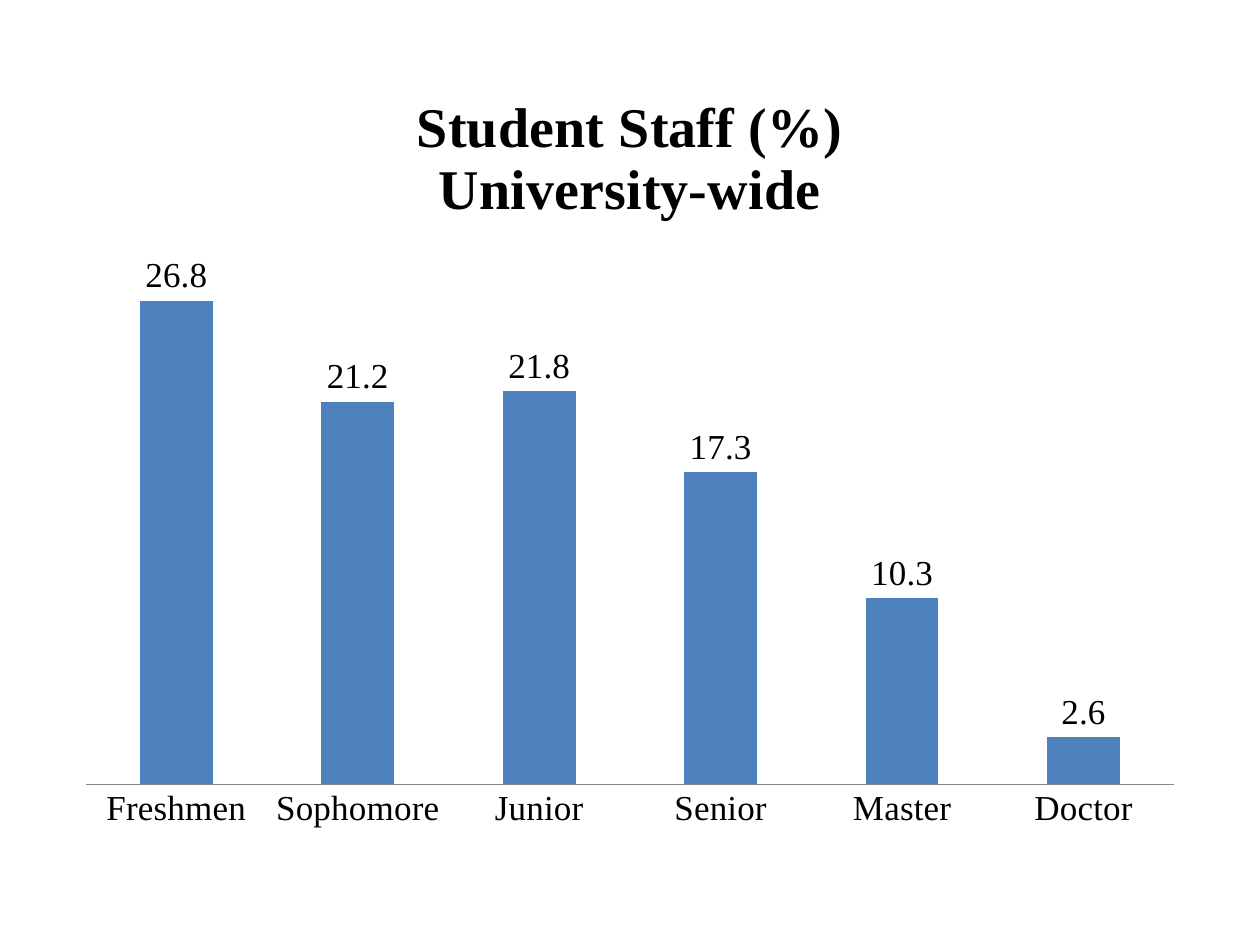
from pptx import Presentation
from pptx.chart.data import CategoryChartData
from pptx.dml.color import RGBColor
from pptx.enum.chart import (
    XL_CHART_TYPE as ChartType,
    XL_LABEL_POSITION as LabelPosition,
    XL_TICK_MARK as TickMark,
)
from pptx.util import Inches, Pt

BLACK = RGBColor(0x00, 0x00, 0x00)
BLUE = RGBColor(0x4F, 0x81, 0xBD)
GRAY = RGBColor(0x86, 0x86, 0x86)

STAFF_SHARES = {
    "Freshmen": 26.8,
    "Sophomore": 21.2,
    "Junior": 21.8,
    "Senior": 17.3,
    "Master": 10.3,
    "Doctor": 2.6,
}


def apply_format(target, values):
    for name, value in values.items():
        setattr(target, name, value)


class SlideBuilder:
    """Holds the text style and the current slide."""

    label_font = {"name": "Times New Roman", "size": Pt(20), "bold": False}
    title_font = {"name": "Times New Roman", "size": Pt(32), "bold": True}

    def __init__(self, presentation):
        self.width = presentation.slide_width
        self.height = presentation.slide_height
        self.slide = presentation.slides.add_slide(presentation.slide_layouts[6])

    def style_font(self, font, values):
        apply_format(font, values)
        font.color.rgb = BLACK

    def add_column_chart(self, shares, left, top, width, height):
        """Place a column chart; lengths are shares of the slide's size."""
        data = CategoryChartData()
        data.categories = list(shares)
        data.add_series("Series 1", list(shares.values()))
        chart = self.slide.shapes.add_chart(
            ChartType.COLUMN_CLUSTERED,
            int(left * self.width), int(top * self.height),
            int(width * self.width), int(height * self.height),
            data,
        ).chart
        chart.has_legend = False
        self.style_font(chart.font, {"name": "Calibri", "size": Pt(10)})
        return chart

    def add_chart_title(self, chart, lines):
        chart.has_title = True
        frame = chart.chart_title.text_frame
        frame.text = "\n".join(lines)
        for paragraph in frame.paragraphs:
            for run in paragraph.runs:
                self.style_font(run.font, self.title_font)
        chart.chart_title.include_in_layout = False

    def format_axes(self, chart):
        apply_format(chart.value_axis, {
            "visible": False, "has_major_gridlines": False,
            "minimum_scale": 0, "maximum_scale": 30,
        })
        axis = chart.category_axis
        apply_format(axis, {
            "major_tick_mark": TickMark.NONE, "minor_tick_mark": TickMark.NONE,
        })
        axis.format.line.color.rgb = GRAY
        axis.format.line.width = Pt(0.75)
        self.style_font(axis.tick_labels.font, self.label_font)

    def format_columns(self, chart):
        plot = chart.plots[0]
        apply_format(plot, {
            "gap_width": 150, "overlap": -25,
            "vary_by_categories": False, "has_data_labels": True,
        })
        fill = plot.series[0].format.fill
        fill.solid()
        fill.fore_color.rgb = BLUE
        labels = plot.data_labels
        apply_format(labels, {
            "show_value": True, "position": LabelPosition.OUTSIDE_END,
        })
        self.style_font(labels.font, self.label_font)


def main():
    presentation = Presentation()
    presentation.slide_width = Inches(10)
    presentation.slide_height = Inches(7.5)

    # Chart with its title
    builder = SlideBuilder(presentation)
    chart = builder.add_column_chart(
        STAFF_SHARES, left=0.05, top=0.55 / 7.5, width=0.9, height=0.82)
    builder.add_chart_title(chart, ["Student Staff (%)", "University-wide"])

    # Axes, columns and value labels
    builder.format_axes(chart)
    builder.format_columns(chart)

    presentation.save("out.pptx")


if __name__ == "__main__":
    main()
